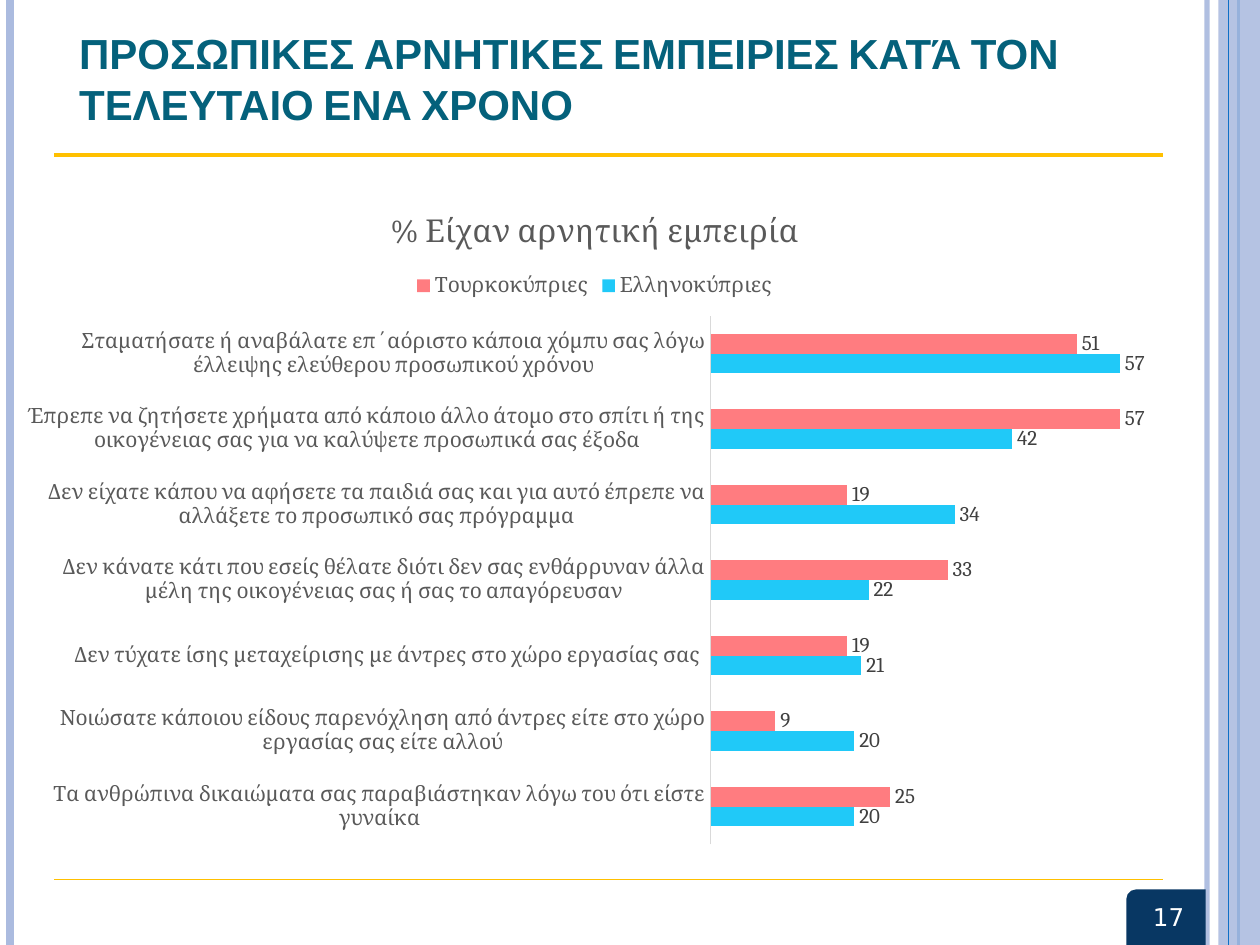
import pptx
import pptx.util
import pptx.chart.data
import pptx.dml.color
import pptx.enum.chart
import pptx.enum.shapes
import pptx.enum.text
import pptx.oxml.ns
import pptx.oxml.xmlchemy

Inches = pptx.util.Inches
Pt = pptx.util.Pt
RGBColor = pptx.dml.color.RGBColor
Shape = pptx.enum.shapes.MSO_SHAPE
Anchor = pptx.enum.text.MSO_ANCHOR
Align = pptx.enum.text.PP_ALIGN
qn = pptx.oxml.ns.qn
make = pptx.oxml.xmlchemy.OxmlElement

PALE = RGBColor(0xAB, 0xBB, 0xDF)
BLUE = RGBColor(0x0F, 0x6F, 0xC6)
NAVY = RGBColor(0x08, 0x37, 0x63)
TEAL = RGBColor(0x04, 0x61, 0x7B)
GOLD = RGBColor(0xFF, 0xC0, 0x00)
WHITE = RGBColor(0xFF, 0xFF, 0xFF)
GRAY = RGBColor(0x59, 0x59, 0x59)
DARK = RGBColor(0x40, 0x40, 0x40)
LIGHT = RGBColor(0xD9, 0xD9, 0xD9)
CYAN = RGBColor(0x20, 0xC9, 0xF8)
CORAL = RGBColor(0xFF, 0x7C, 0x80)

GREEK = "Ελληνοκύπριες"
TURKISH = "Τουρκοκύπριες"
COLORS = {GREEK: CYAN, TURKISH: CORAL}
ROWS = [
    ("Τα ανθρώπινα δικαιώματα σας παραβιάστηκαν λόγω του ότι είστε γυναίκα", 20, 25),
    ("Νοιώσατε κάποιου είδους παρενόχληση από άντρες είτε στο χώρο εργασίας σας είτε αλλού", 20, 9),
    ("Δεν τύχατε ίσης μεταχείρισης με άντρες στο χώρο εργασίας σας ", 21, 19),
    ("Δεν κάνατε κάτι που εσείς θέλατε διότι δεν σας ενθάρρυναν άλλα μέλη της οικογένειας σας ή σας το απαγόρευσαν", 22, 33),
    ("Δεν είχατε κάπου να αφήσετε τα παιδιά σας και για αυτό έπρεπε να αλλάξετε το προσωπικό σας πρόγραμμα", 34, 19),
    ("Έπρεπε να ζητήσετε χρήματα από κάποιο άλλο άτομο στο σπίτι ή της οικογένειας σας για να καλύψετε προσωπικά σας έξοδα", 42, 57),
    ("Σταματήσατε ή αναβάλατε επ΄αόριστο κάποια χόμπυ σας λόγω έλλειψης ελεύθερου προσωπικού χρόνου", 57, 51),
]


class Deck:
    def __init__(self, slide):
        self.slide = slide
        self.face = "Cambria"

    def style(self, font, **values):
        color = values.pop("color")
        for key, value in values.items():
            setattr(font, key, value)
        font.color.rgb = color

    def fade(self, root, alpha):
        tint = next(root.iter(qn("a:srgbClr")))
        node = make("a:alpha")
        node.set("val", str(alpha * 1000))
        tint.append(node)

    def line(self, start, end, color, width, alpha=100):
        points = [Inches(v) for v in (*start, *end)]
        kind = pptx.enum.shapes.MSO_CONNECTOR.STRAIGHT
        line = self.slide.shapes.add_connector(kind, *points)
        line.line.color.rgb = color
        line.line.width = Pt(width)
        if alpha < 100:
            self.fade(line._element.spPr, alpha)
        line._element.spPr.append(make("a:effectLst"))

    def shape(self, kind, box, color, alpha=100, flip=False):
        shape = self.slide.shapes.add_shape(kind, *map(Inches, box))
        shape.shadow.inherit = False
        shape.fill.solid()
        shape.fill.fore_color.rgb = color
        shape.line.fill.background()
        if alpha < 100:
            self.fade(shape._element.spPr, alpha)
        if flip:
            shape._element.spPr.find(qn("a:xfrm")).set("flipH", "1")

    def text(self, words, box, anchor, align, caps=False, **font):
        frame = self.slide.shapes.add_textbox(*map(Inches, box)).text_frame
        frame.word_wrap = True
        frame.vertical_anchor = anchor
        para = frame.paragraphs[0]
        para.alignment = align
        run = para.add_run()
        run.text = words
        self.style(run.font, **font)
        if caps:
            run._r.get_or_add_rPr().set("cap", "small")

    def chart(self, title, rows, box):
        enum = pptx.enum.chart
        names, greek, turk = zip(*rows)
        data = pptx.chart.data.CategoryChartData(number_format="0")
        data.categories = names
        data.add_series(GREEK, greek)
        data.add_series(TURKISH, turk)
        chart = self.slide.shapes.add_chart(
            enum.XL_CHART_TYPE.BAR_CLUSTERED, *map(Inches, box), data).chart
        chart.font.name = self.face
        chart.font.size = Pt(10)
        base = dict(name=self.face, size=Pt(12), color=GRAY)

        chart.has_title = True
        frame = chart.chart_title.text_frame
        frame.text = title
        head = dict(base, size=Pt(18), bold=False)
        self.style(frame.paragraphs[0].runs[0].font, **head)

        chart.has_legend = True
        chart.legend.position = enum.XL_LEGEND_POSITION.TOP
        chart.legend.include_in_layout = False
        self.style(chart.legend.font, **base)

        axis = chart.category_axis
        axis.major_tick_mark = enum.XL_TICK_MARK.NONE
        axis.format.line.color.rgb = LIGHT
        axis.format.line.width = Pt(0.75)
        self.style(axis.tick_labels.font, **base)
        chart.value_axis.has_major_gridlines = False
        chart.value_axis.minimum_scale = 0
        chart.value_axis.visible = False

        plot = chart.plots[0]
        plot.gap_width = 182
        plot.overlap = 0
        plot.vary_by_categories = False
        for series in plot.series:
            series.format.fill.solid()
            series.format.fill.fore_color.rgb = COLORS[series.name]
            tags = series.data_labels
            tags.show_value = True
            tags.number_format = "0"
            tags.number_format_is_linked = False
            tags.position = enum.XL_LABEL_POSITION.OUTSIDE_END
            self.style(tags.font, **dict(base, color=DARK))


def main():
    show = pptx.Presentation()
    show.slide_width = Inches(10)
    show.slide_height = Inches(7.5)
    deck = Deck(show.slides.add_slide(show.slide_layouts[6]))

    def rail(x, color, width, alpha=100):
        deck.line((x, 0), (x, 7.5), color, width, alpha)

    rail(9.58, PALE, 3, 93)
    rail(0.08, PALE, 4.5)
    rail(9.83, BLUE, 1.5)
    deck.shape(Shape.RECTANGLE, (9.67, 0, 0.33, 7.5), PALE, 87)
    rail(9.75, BLUE, 0.75)
    deck.shape(Shape.ROUND_1_RECTANGLE, (8.94, 7.06, 0.63, 0.44), NAVY, flip=True)

    deck.text("ΠΡΟΣΩΠΙΚΕΣ ΑΡΝΗΤΙΚΕΣ ΕΜΠΕΙΡΙΕΣ ΚΑΤΆ ΤΟΝ ΤΕΛΕΥΤΑΙΟ ΕΝΑ ΧΡΟΝΟ",
              (0.53, 0.49, 8.74, 0.58), Anchor.BOTTOM, Align.LEFT, caps=True,
              name="Arial", size=Pt(24), bold=True, color=TEAL)
    deck.text("17", (8.94, 6.94, 0.67, 0.67), Anchor.MIDDLE, Align.CENTER,
              name="DejaVu Sans", size=Pt(14), color=WHITE)
    for y, width in ((1.23, 2.25), (6.98, 1)):
        deck.line((0.43, y), (9.23, y), GOLD, width)
    deck.chart("% Είχαν αρνητική εμπειρία", ROWS, (0.2, 1.46, 9.04, 5.35))
    show.save("out.pptx")


if __name__ == "__main__":
    main()
